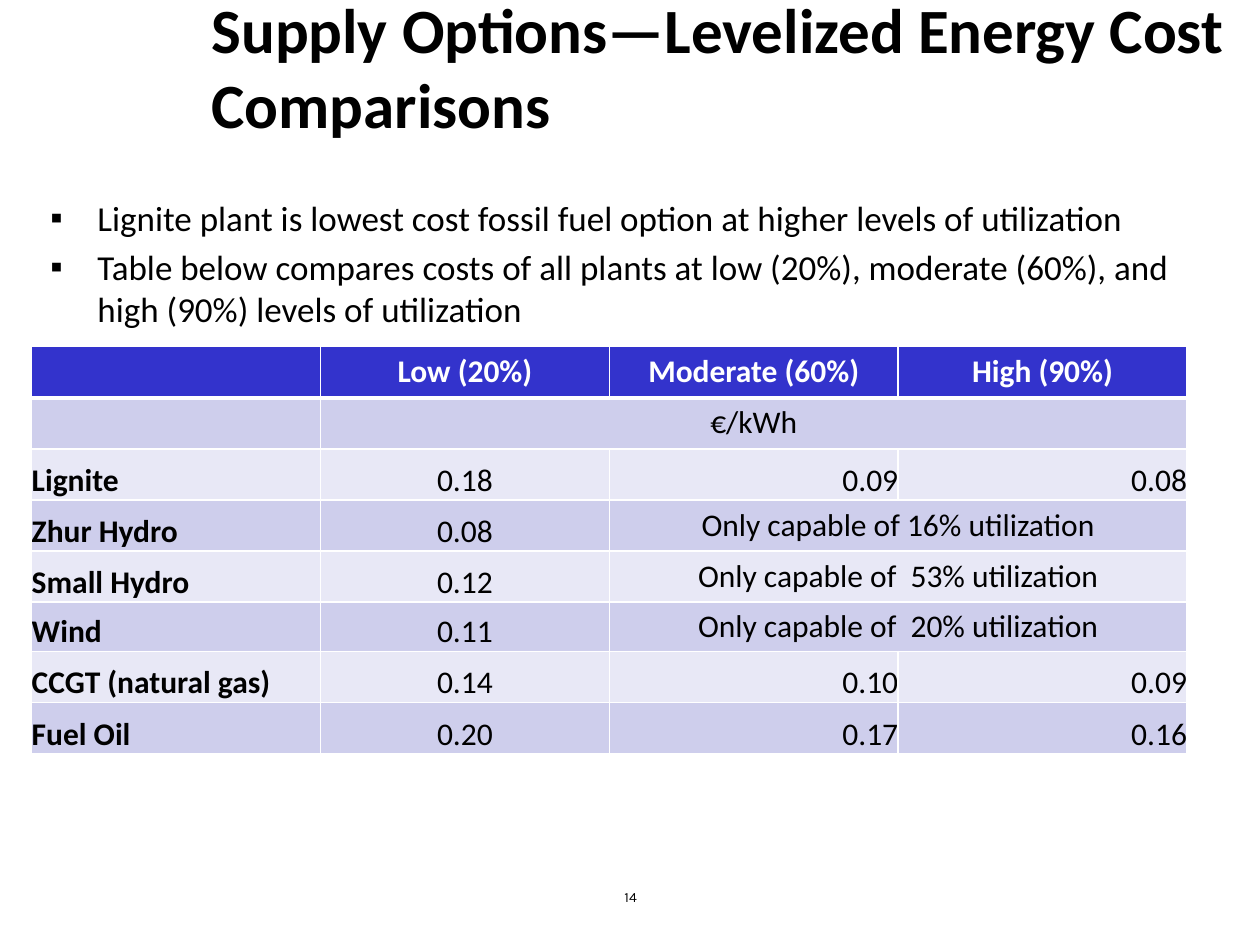
from lxml.etree import SubElement as Sub
from pptx import Presentation
from pptx.dml.color import RGBColor
from pptx.enum.text import MSO_ANCHOR as Anchor, MSO_AUTO_SIZE as Fit, PP_ALIGN as Align
from pptx.oxml.ns import qn
from pptx.util import Cm, Pt

BLACK = RGBColor(0x00, 0x00, 0x00)
WHITE = RGBColor(0xFF, 0xFF, 0xFF)
BLUE = RGBColor(0x33, 0x33, 0xCC)
LILAC = RGBColor(0xCE, 0xCE, 0xEC)
PALE = RGBColor(0xE8, 0xE8, 0xF6)

POINTS = [
    "Lignite plant is lowest cost fossil fuel option at higher levels of utilization",
    "Table below compares costs of all plants at low (20%), moderate (60%), "
    "and high (90%) levels of utilization",
]
# A short row stretches its last cell to the right edge
COSTS = [
    ["", "Low (20%)", "Moderate (60%)", "High (90%)"],
    ["", "€/kWh"],
    ["Lignite", "0.18", "0.09", "0.08"],
    ["Zhur Hydro", "0.08", "Only capable of 16% utilization"],
    ["Small Hydro", "0.12", "Only capable of  53% utilization"],
    ["Wind", "0.11", "Only capable of  20% utilization"],
    ["CCGT (natural gas)", "0.14", "0.10", "0.09"],
    ["Fuel Oil", "0.20", "0.17", "0.16"],
]


class Deck:
    font = "Calibri"

    def __init__(self):
        self.prs = Presentation()
        self.prs.slide_width, self.prs.slide_height = Cm(25.4), Cm(19.05)
        self.slide = self.prs.slides.add_slide(self.prs.slide_layouts[1])

    def place(self, shape, left, top, width, height):
        shape.left, shape.top = Cm(left), Cm(top)
        shape.width, shape.height = Cm(width), Cm(height)
        shape.text_frame.word_wrap = True
        shape.text_frame.auto_size = Fit.NONE
        return shape.text_frame

    def add_text(self, para, text, size, color=BLACK, bold=False, font=None):
        run = para.add_run()
        run.text = text
        run.font.name = font or self.font
        run.font.size, run.font.bold = Pt(size), bold
        run.font.color.rgb = color

    def title(self, text, *box):
        frame = self.place(self.slide.shapes.title, *box)
        frame.vertical_anchor = Anchor.MIDDLE
        para = frame.paragraphs[0]
        para.alignment = Align.LEFT
        self.add_text(para, text, 36, bold=True)

    def bullets(self, items, *box):
        frame = self.place(self.slide.placeholders[1], *box)
        for i, text in enumerate(items):
            para = frame.add_paragraph() if i else frame.paragraphs[0]
            props = para._p.get_or_add_pPr()
            props.set("marL", str(Cm(0.95)))
            props.set("indent", str(Cm(-0.95)))
            Sub(props, qn("a:buFont"), typeface="Arial")
            Sub(props, qn("a:buChar"), char="▪")
            para.space_before = Pt(4 if i else 0)
            self.add_text(para, text, 20)

    def note(self, text, size, font, *box):
        shape = self.slide.shapes.add_textbox(0, 0, 0, 0)
        para = self.place(shape, *box).paragraphs[0]
        para.alignment = Align.CENTER
        self.add_text(para, text, size, font=font)

    def edge(self, cell, side, width):
        line = Sub(cell._tc.get_or_add_tcPr(), qn("a:" + side), w=str(Pt(width)))
        fill = Sub(line, qn("a:solidFill"))
        Sub(fill, qn("a:srgbClr"), val=str(WHITE))

    def cell(self, cell, text, align, anchor, color, bold, head):
        cell.margin_left = cell.margin_right = Cm(0.18 if head else 0)
        cell.margin_top = cell.margin_bottom = 0
        cell.vertical_anchor = anchor
        para = cell.text_frame.paragraphs[0]
        para.alignment = align
        para.font.size = Pt(18)
        if head:
            para.line_spacing, para.space_after = 1.15, Pt(6)
        if text:
            self.add_text(para, text, 18, color, bold)

    def table(self, rows, left, top, width, heights):
        cols = len(rows[0])
        grid = self.slide.shapes.add_table(
            len(rows), cols, Cm(left), Cm(top), Cm(width), Cm(sum(heights))).table
        for col in grid.columns:
            col.width = Cm(width / cols)
        for r, row in enumerate(rows):
            grid.rows[r].height = Cm(heights[r])
            # Borders come before the fill in the cell properties
            for c in range(cols):
                cell = grid.cell(r, c)
                for side in ("lnL", "lnR", "lnT", "lnB"):
                    thick = (r, side) in ((0, "lnB"), (1, "lnT"))
                    self.edge(cell, side, 3 if thick else 1)
                cell.fill.solid()
                cell.fill.fore_color.rgb = BLUE if r == 0 else LILAC if r % 2 else PALE
            last = len(row) - 1
            if len(row) < cols:
                grid.cell(r, last).merge(grid.cell(r, cols - 1))
            for c, text in enumerate(row):
                head, wide = r < 2, c == last < cols - 1
                align = (Align.CENTER if head or wide or c == 1
                         else Align.RIGHT if c else Align.LEFT)
                anchor = Anchor.TOP if head else Anchor.MIDDLE if wide else Anchor.BOTTOM
                self.cell(grid.cell(r, c), text, align, anchor,
                          BLACK if r else WHITE, r == 0 or c == 0, head)


def main():
    deck = Deck()
    # Heading and points
    deck.title("Supply Options—Levelized Energy Cost Comparisons", 4.01, 0.18, 20.98, 2.29)
    deck.bullets(POINTS, 0.76, 3.84, 24.03, 13.11)
    # Page number
    deck.note("14", 8, "Karla", 8.69, 17.78, 8.05, 1.27)
    # Cost table, with a slightly lower row for wind
    heights = [0.99 if row[0] == "Wind" else 1.03 for row in COSTS]
    deck.table(COSTS, 0.64, 6.99, 23.29, heights)
    deck.prs.save("out.pptx")


if __name__ == "__main__":
    main()
